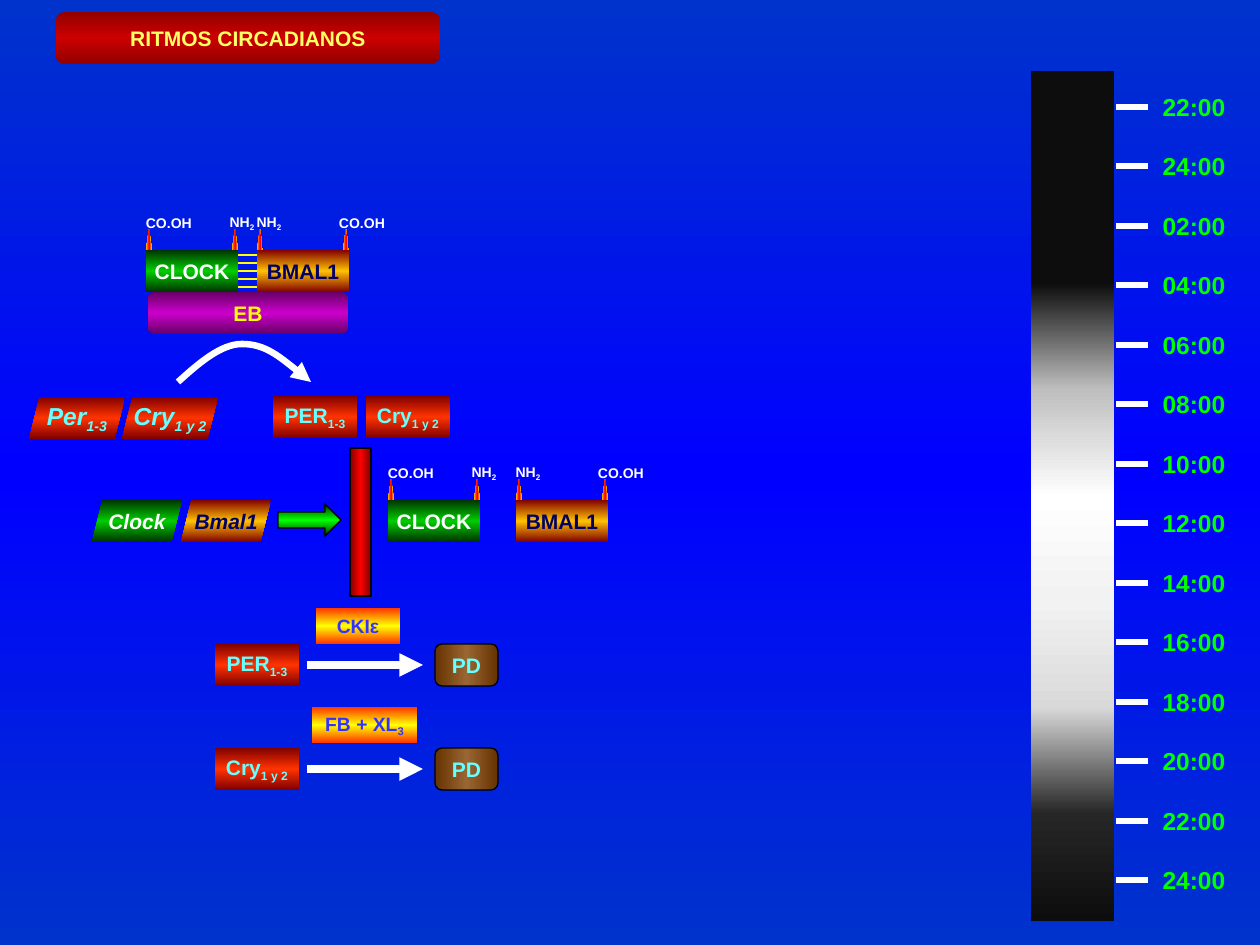
from dataclasses import dataclass

from lxml import etree
from pptx import Presentation
from pptx.dml.color import RGBColor
from pptx.enum.shapes import MSO_CONNECTOR, MSO_SHAPE
from pptx.enum.text import MSO_ANCHOR, PP_ALIGN
from pptx.oxml.ns import qn
from pptx.util import Emu, Pt

EMU_PER_PX = 914400 / 126
RECTANGLE = MSO_SHAPE.RECTANGLE
ROUNDED = MSO_SHAPE.ROUNDED_RECTANGLE
PARALLELOGRAM = MSO_SHAPE.PARALLELOGRAM
TRIANGLE = MSO_SHAPE.ISOSCELES_TRIANGLE
RIGHT_ARROW = MSO_SHAPE.RIGHT_ARROW
STRAIGHT = MSO_CONNECTOR.STRAIGHT
MIDDLE = MSO_ANCHOR.MIDDLE
CENTER = PP_ALIGN.CENTER
DOWN = 270
ACROSS = 0


@dataclass(frozen=True)
class Theme:
    font: str = "Arial"
    tiny: int = 8
    small: int = 11
    body: int = 12
    large: int = 14
    white: str = "FFFFFF"
    black: str = "000000"
    yellow: str = "FFFF00"
    title: str = "FFFF66"
    hour: str = "00FF00"
    cyan: str = "66FFFF"
    navy: str = "000066"
    blue: str = "3333FF"
    background: tuple = ("0033CC", "0000FF", "0033CC")
    crimson: tuple = ("920000", "CC0000", "920000")
    purple: tuple = ("660066", "CC00CC", "660066")
    green: tuple = ("003300", "00CC00", "003300")
    bright_green: tuple = ("003300", "00FF00", "003300")
    amber: tuple = ("800000", "FFC000", "800000")
    vermilion: tuple = ("800000", "FF3300", "800000")
    red: tuple = ("800000", "FF0000", "800000")
    spike: tuple = ("FFC000", "FF0000", "FFC000")
    brown: tuple = ("663300", "996633", "663300")
    flame: tuple = ("FF3300", "FFFF00", "FF3300")
    daylight: tuple = (
        ("0D0D0D", "0D0D0D", "0D0D0D"),
        ("0D0D0D", "BFBFBF", "FFFFFF"),
        ("FFFFFF", "F2F2F2", "D9D9D9"),
        ("D9D9D9", "262626", "0D0D0D"),
    )


THEME = Theme()


def px(value):
    return Emu(round(value * EMU_PER_PX))


def set_gradient(fill, element, colors, angle):
    fill.gradient()
    fill.gradient_angle = angle
    stops = element.find(".//" + qn("a:gsLst"))
    for stop in list(stops):
        stops.remove(stop)
    for index, color in enumerate(colors):
        stop = etree.SubElement(stops, qn("a:gs"), pos=str(index * 50000))
        etree.SubElement(stop, qn("a:srgbClr"), val=color)


def set_line(shape, color, width, arrow=False):
    shape.line.color.rgb = RGBColor.from_string(color)
    shape.line.width = Pt(width)
    if arrow:
        outline = shape._element.spPr.find(qn("a:ln"))
        etree.SubElement(outline, qn("a:tailEnd"), type="triangle")


def write_text(shape, parts, size, color, italic=False):
    frame = shape.text_frame
    frame.word_wrap = True
    frame.margin_left = frame.margin_right = 0
    frame.vertical_anchor = MIDDLE
    paragraph = frame.paragraphs[0]
    paragraph.alignment = CENTER
    for index, text in enumerate(parts):
        run = paragraph.add_run()
        run.text = text
        run.font.name = THEME.font
        run.font.size = Pt(size)
        run.font.bold = True
        run.font.italic = italic
        run.font.color.rgb = RGBColor.from_string(color)
        if index:
            run._r.get_or_add_rPr().set("baseline", "-25000")


def add_label(slide, center_x, center_y, parts, size, color, italic=False, width=105):
    height = {THEME.tiny: 30, THEME.body: 38, THEME.large: 43}[size]
    label = slide.shapes.add_textbox(
        px(center_x - width / 2), px(center_y - height / 2), px(width), px(height))
    write_text(label, parts, size, color, italic)


def add_block(slide, kind, box, colors, angle=DOWN, outlined=False):
    shape = slide.shapes.add_shape(kind, *map(px, box))
    shape.shadow.inherit = False
    set_gradient(shape.fill, shape._element, colors, angle)
    if outlined:
        set_line(shape, THEME.black, 0.75)
    else:
        shape.line.fill.background()
    return shape


def add_labelled_block(slide, kind, box, colors, parts, color, size=THEME.body,
                       italic=False, label_width=105, angle=DOWN, outlined=False):
    left, top, width, height = box
    add_block(slide, kind, box, colors, angle, outlined)
    add_label(slide, left + width / 2, top + height / 2, parts, size, color,
              italic, label_width)


def add_line(slide, start, end, color, width, arrow=False):
    line = slide.shapes.add_connector(STRAIGHT, *map(px, (*start, *end)))
    set_line(line, color, width, arrow)
    etree.SubElement(line._element.spPr, qn("a:effectLst"))


def add_curved_arrow(slide):
    builder = slide.shapes.build_freeform(178, 382, scale=EMU_PER_PX)
    builder.add_line_segments([(242, 344), (311, 382)], close=False)
    curve = builder.convert_to_shape()
    curve.shadow.inherit = False
    curve.fill.background()
    set_line(curve, THEME.white, 3.75, arrow=True)
    segments = list(curve._element.iter(qn("a:lnTo")))
    controls = [((21, 19), (43, 0)), ((87, 0), (110, 19))]
    for segment, points in zip(segments, controls):
        segment.tag = qn("a:cubicBezTo")
        for index, (x, y) in enumerate(points):
            point = etree.Element(qn("a:pt"), x=str(x), y=str(y))
            segment.insert(index, point)


def add_protein(slide, left, top, name, colors, color, terminals):
    for offset, parts in terminals:
        add_label(slide, left + offset, top - 27, parts, THEME.tiny, THEME.white, width=73)
    for offset in (0, 86):
        add_block(slide, TRIANGLE, (left + offset, top - 21, 6, 21), THEME.spike, ACROSS)
    add_labelled_block(slide, RECTANGLE, (left, top, 92, 42), colors, (name,), color)


def add_protein_pair(slide, clock_left, bmal_left, top):
    carboxyl, amino = ("CO.OH",), ("NH", "2")
    add_protein(slide, clock_left, top, "CLOCK", THEME.green, THEME.white,
                ((23, carboxyl), (96, amino)))
    add_protein(slide, bmal_left, top, "BMAL1", THEME.amber, THEME.navy,
                ((12, amino), (105, carboxyl)))


def add_clock_product(slide, left, top, parts):
    add_labelled_block(slide, RECTANGLE, (left, top, 84, 42), THEME.vermilion,
                       parts, THEME.cyan)


def add_degradation(slide, top, protein, enzyme, enzyme_left, enzyme_width):
    add_clock_product(slide, 215, top, protein)
    add_labelled_block(slide, ROUNDED, (435, top, 63, 42), THEME.brown, ("PD",),
                       THEME.cyan, label_width=55, angle=ACROSS, outlined=True)
    add_line(slide, (307, top + 21), (423, top + 21), THEME.white, 4.5, arrow=True)
    box = (enzyme_left, top - 36 if enzyme_width < 100 else top - 41, enzyme_width, 36)
    block = add_block(slide, RECTANGLE, box, THEME.flame)
    write_text(block, enzyme, THEME.small, THEME.blue)


def add_day_scale(slide):
    for index in range(14):
        y = 107 + index * 119 // 2
        hour = (21 + 2 * index) % 24 + 1
        add_line(slide, (1148, y), (1116, y), THEME.white, 3)
        add_label(slide, 1194, y, (f"{hour:02}:00",), THEME.large, THEME.hour)
    for index, colors in enumerate(THEME.daylight):
        add_block(slide, RECTANGLE, (1031, 71 + index * 212, 83, 214), colors)


def main():
    presentation = Presentation()
    presentation.slide_width, presentation.slide_height = px(1260), px(945)
    slide = presentation.slides.add_slide(presentation.slide_layouts[6])
    set_gradient(slide.background.fill, slide._element, THEME.background, DOWN)

    add_labelled_block(slide, ROUNDED, (56, 12, 384, 52), THEME.crimson,
                       ("RITMOS CIRCADIANOS",), THEME.title, label_width=262)
    add_day_scale(slide)

    add_labelled_block(slide, ROUNDED, (148, 292, 200, 42), THEME.purple, ("EB",),
                       THEME.yellow, label_width=73)
    for y in range(255, 288, 8):
        add_line(slide, (232, y), (263, y), THEME.yellow, 1)
    add_protein_pair(slide, 146, 257, 250)
    add_curved_arrow(slide)

    genes = (
        ((29, 397, 96, 42), THEME.vermilion, ("Per", "1-3"), THEME.cyan, THEME.large),
        ((122, 397, 96, 42), THEME.vermilion, ("Cry", "1 y 2"), THEME.cyan, THEME.large),
        ((92, 500, 90, 42), THEME.green, ("Clock",), THEME.white, THEME.body),
        ((181, 500, 90, 42), THEME.amber, ("Bmal1",), THEME.navy, THEME.body),
    )
    for gene in genes:
        add_labelled_block(slide, PARALLELOGRAM, *gene, italic=True)

    add_clock_product(slide, 273, 396, ("PER", "1-3"))
    add_clock_product(slide, 366, 396, ("Cry", "1 y 2"))
    add_block(slide, RECTANGLE, (350, 448, 21, 148), THEME.red, ACROSS, outlined=True)
    add_protein_pair(slide, 388, 516, 500)
    add_block(slide, RIGHT_ARROW, (278, 504, 63, 32), THEME.bright_green, outlined=True)
    add_degradation(slide, 644, ("PER", "1-3"), ("CKIε",), 316, 84)
    add_degradation(slide, 748, ("Cry", "1 y 2"), ("FB + XL", "3"), 312, 105)
    presentation.save("out.pptx")


if __name__ == "__main__":
    main()
